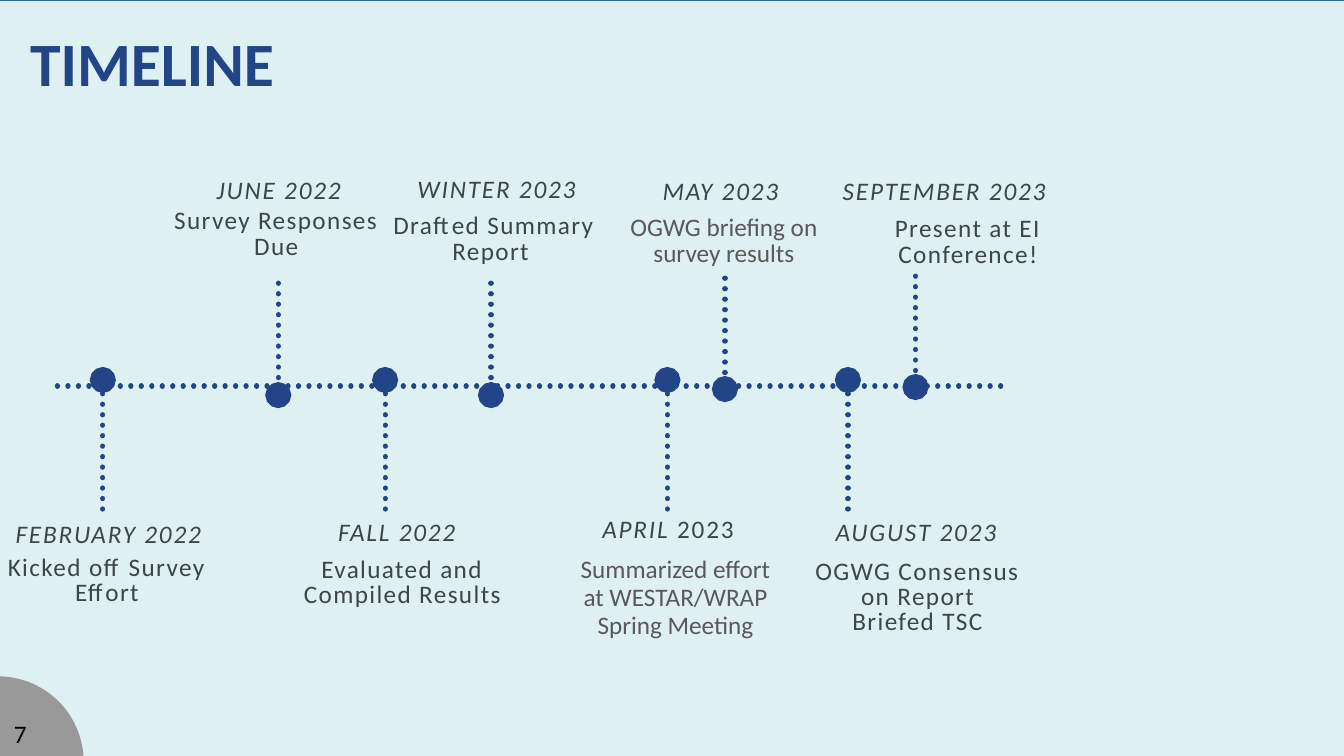
import math
from typing import NamedTuple

from lxml import etree
from pptx import Presentation
from pptx.dml.color import RGBColor
from pptx.enum import dml, shapes, text
from pptx.oxml import ns
from pptx.util import Inches, Pt

NAVY = RGBColor(0x21, 0x45, 0x86)
TEAL = RGBColor(0x26, 0x6D, 0x8A)
PALE = RGBColor(0xDE, 0xF0, 0xF1)
GREY = RGBColor(0x99, 0x99, 0x99)
SLATE = RGBColor(0x3D, 0x46, 0x47)
DIM = RGBColor(0x59, 0x59, 0x59)
BLACK = RGBColor(0, 0, 0)
FONT = "Calibri"
AXIS_Y = 3.83


class Milestone(NamedTuple):
    stem_x: float
    stem_from: float
    stem_to: float
    date: str
    date_at: tuple  # left, top
    details: list
    details_at: tuple  # left, top, width, height
    color: RGBColor = SLATE
    tracking: float = 1
    leading: float = 18
    plain_year: str = ""
    date_width: float = 2.29


MILESTONES = [
    Milestone(1.02, 5.05, 3.77, "FEBRUARY 2022", (0, 5.15),
              ["Kicked off Survey Effort"], (0, 5.52, 2.12, 0.51), date_width=2.15),
    Milestone(2.76, 2.81, 3.92, "JUNE 2022", (1.62, 1.74),
              ["Survey Responses Due"], (1.68, 2.08, 2.12, 0.51)),
    Milestone(3.82, 5.05, 3.77, "FALL 2022", (2.79, 5.13),
              ["Evaluated and Compiled Results"], (2.93, 5.54, 2.12, 0.51)),
    Milestone(4.87, 2.81, 3.92, "WINTER 2023", (3.78, 1.73),
              ["Drafted Summary Report "], (3.84, 2.13, 2.12, 0.51)),
    Milestone(6.62, 5.05, 3.77, "APRIL", (5.48, 5.1),
              ["Summarized effort at WESTAR/WRAP Spring Meeting"],
              (5.65, 5.51, 2.1, 0.84), DIM, 0, 20, " 2023"),
    Milestone(7.19, 2.76, 3.86, "MAY 2023", (6, 1.75),
              ["OGWG briefing on survey results"], (6.15, 2.15, 2.06, 0.51), DIM, 0),
    Milestone(8.41, 5.05, 3.77, "AUGUST 2023", (7.94, 5.13),
              ["OGWG Consensus on Report", "Briefed TSC"], (8.04, 5.56, 2.12, 0.76)),
    Milestone(9.08, 2.74, 3.84, "SEPTEMBER 2023", (8.22, 1.75),
              ["Present at EI Conference!"], (8.54, 2.16, 2.12, 0.51)),
]


def add_span(para, words, color, size=18, tracking=0, italic=False, bold=False):
    span = para.add_run()
    span.text = words
    span.font.name = FONT
    span.font.size = Pt(size)
    span.font.color.rgb = color
    span.font.italic = italic
    span.font.bold = bold
    if tracking:
        span.font._element.set("spc", str(round(tracking * 100)))


def add_label(page, left, top, width, height):
    """Add a wrapping text box without margins and return its frame."""
    box = page.shapes.add_textbox(Inches(left), Inches(top), Inches(width), Inches(height))
    frame = box.text_frame
    frame.word_wrap = True
    frame.margin_left = frame.margin_top = frame.margin_right = frame.margin_bottom = 0
    return frame


def center(para, leading):
    para.alignment = text.PP_ALIGN.CENTER
    para.line_spacing = Pt(leading)


def add_dotted_line(page, start, end, dot_end=False):
    line = page.shapes.add_connector(
        shapes.MSO_CONNECTOR.STRAIGHT, *map(Inches, start + end))
    line.line.color.rgb = NAVY
    line.line.width = Pt(3.75)
    line.line.dash_style = dml.MSO_LINE.ROUND_DOT
    outline = line.line._get_or_add_ln()
    outline.set("cap", "rnd")
    if dot_end:
        etree.SubElement(outline, ns.qn("a:tailEnd"), type="oval", w="lg", len="lg")
    etree.SubElement(line._element.spPr, ns.qn("a:effectLst"))


def add_milestone(page, item):
    add_dotted_line(page, (item.stem_x, item.stem_from), (item.stem_x, item.stem_to), True)

    para = add_label(page, *item.date_at, item.date_width, 0.29).paragraphs[0]
    center(para, 20.8)
    add_span(para, item.date, SLATE, tracking=1.3, italic=True)
    if item.plain_year:
        add_span(para, item.plain_year, SLATE, tracking=1.3)

    frame = add_label(page, *item.details_at)
    for index, words in enumerate(item.details):
        para = frame.add_paragraph() if index else frame.paragraphs[0]
        center(para, item.leading)
        add_span(para, words, item.color, tracking=item.tracking)


def paint(shape, color):
    shape.shadow.inherit = False
    shape.fill.solid()
    shape.fill.fore_color.rgb = color


def add_backdrop(page):
    """Lay the pale panel with its teal top edge behind everything."""
    panel = page.shapes.add_shape(
        shapes.MSO_SHAPE.RECTANGLE, Inches(-0.01), 0, Inches(13.36), Inches(7.54))
    paint(panel, PALE)
    panel.line.color.rgb = TEAL
    panel.line.width = Pt(1)
    page.shapes._spTree.insert(2, panel._element)


def add_corner(page):
    """Draw the quarter disc in the lower left corner, ending at the slide edges."""
    center_x, center_y, radius, steps = -0.02, 7.56, 0.85, 40
    first = math.asin(-center_x / radius)
    last = math.acos((center_y - 7.5) / radius)
    angles = [first + (last - first) * step / steps for step in range(steps + 1)]
    arc = [(Inches(center_x + radius * math.sin(angle)),
            Inches(center_y - radius * math.cos(angle))) for angle in angles]
    builder = page.shapes.build_freeform(0, Inches(7.5))
    builder.add_line_segments(arc, close=True)
    corner = builder.convert_to_shape()
    paint(corner, GREY)
    corner.line.fill.background()


def add_title(page, words):
    title = page.shapes.title
    title.left, title.top = Inches(0.2), Inches(0.19)
    title.width, title.height = Inches(11.74), Inches(0.84)
    title.text_frame.vertical_anchor = text.MSO_ANCHOR.MIDDLE
    para = title.text_frame.paragraphs[0]
    para.alignment = text.PP_ALIGN.LEFT
    add_span(para, words, NAVY, size=44, bold=True)


def add_page_number(page, number):
    box = page.shapes.add_textbox(Inches(0.04), Inches(7.08), Inches(0.85), Inches(0.34))
    box.text_frame.word_wrap = True
    add_span(box.text_frame.paragraphs[0], number, BLACK)


def main():
    deck = Presentation()
    deck.slide_width, deck.slide_height = Inches(13.33), Inches(7.5)
    page = deck.slides.add_slide(deck.slide_layouts[5])
    add_backdrop(page)
    add_corner(page)
    add_title(page, "TIMELINE")
    add_page_number(page, "7")
    add_dotted_line(page, (0.57, AXIS_Y), (10.02, AXIS_Y))
    for item in MILESTONES:
        add_milestone(page, item)
    deck.save("out.pptx")


if __name__ == "__main__":
    main()
